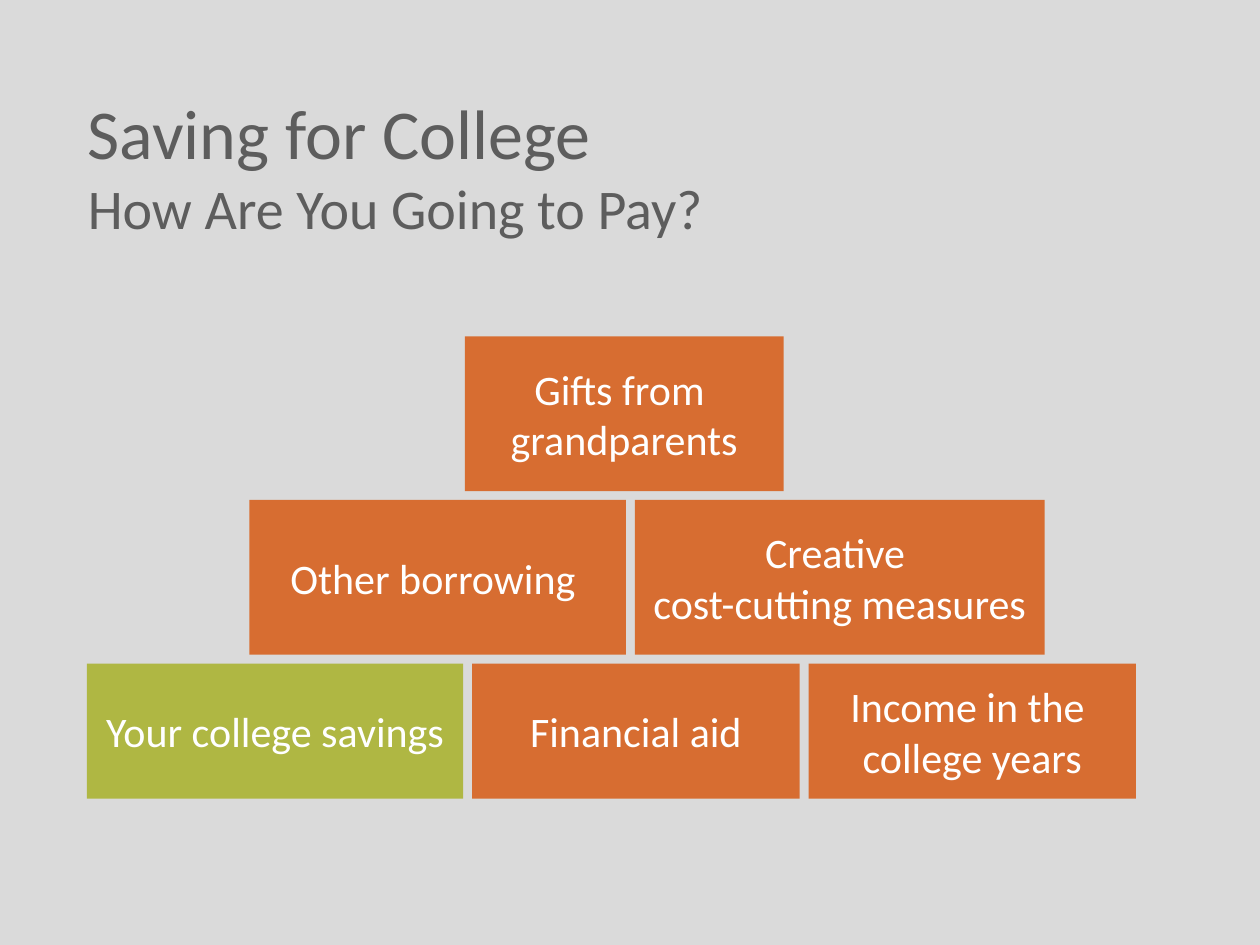
"""Build the college funding slide with its pyramid of funding blocks."""
from pptx import Presentation
from pptx import util as u
from pptx.dml.color import RGBColor
from pptx.enum import shapes, text

GREY = RGBColor(0xDA, 0xDA, 0xDA)
DARK = RGBColor(0x5D, 0x5D, 0x5D)
GREEN = RGBColor(0xAF, 0xB7, 0x43)
ORANGE = RGBColor(0xD7, 0x6D, 0x31)
WHITE = RGBColor(0xFF, 0xFF, 0xFF)

GAP = 0.18
TOP = 6.78
ROWS = [
    (9.37, 3.12, [("Gifts from \ngrandparents", 6.43, ORANGE)]),
    (5.03, 3.12, [("Other borrowing ", 7.59, ORANGE),
                  ("Creative \ncost-cutting measures", 8.26, ORANGE)]),
    (1.75, 2.72, [("Your college savings", 7.59, GREEN),
                  ("Financial aid", 6.6, ORANGE),
                  ("Income in the \vcollege years", 6.6, ORANGE)]),
]


def add_text(tf, content, sizes, color, font="Calibri",
             align=text.PP_ALIGN.LEFT):
    for i, line in enumerate(content.split("\n")):
        p = tf.add_paragraph() if i else tf.paragraphs[0]
        p.text = line
        p.alignment = align
        for r in p.runs:
            r.font.name = font
            r.font.size = u.Pt(sizes[min(i, len(sizes) - 1)])
            r.font.color.rgb = color


class Deck:
    def __init__(self, prs):
        self.s = prs.slides.add_slide(prs.slide_layouts[6])
        self.s.background.fill.solid()
        self.s.background.fill.fore_color.rgb = GREY

    def title(self, content, x, y, w, h):
        sp = self.s.shapes.add_textbox(u.Cm(x), u.Cm(y), u.Cm(w), u.Cm(h))
        tf = sp.text_frame
        tf.word_wrap = True
        tf.vertical_anchor = text.MSO_ANCHOR.BOTTOM
        tf.margin_bottom = 0
        add_text(tf, content, (40, 32), DARK)

    def block(self, content, x, y, w, h, fill):
        sp = self.s.shapes.add_shape(shapes.MSO_SHAPE.RECTANGLE,
                                     u.Cm(x), u.Cm(y), u.Cm(w), u.Cm(h))
        sp.shadow.inherit = False
        sp.fill.solid()
        sp.fill.fore_color.rgb = fill
        sp.line.fill.background()
        tf = sp.text_frame
        tf.word_wrap = False
        tf.vertical_anchor = text.MSO_ANCHOR.MIDDLE
        tf.margin_left = tf.margin_right = u.Cm(0.25)
        tf.margin_top = tf.margin_bottom = u.Cm(0.25)
        add_text(tf, content, (24,), WHITE, align=text.PP_ALIGN.CENTER)


def main():
    prs = Presentation()
    prs.slide_width, prs.slide_height = u.Cm(25.4), u.Cm(19.05)
    deck = Deck(prs)
    deck.title("Saving for College\nHow Are You Going to Pay?",
               1.52, 1.47, 20.29, 3.38)
    y = TOP
    for x, h, blocks in ROWS:
        for content, w, fill in blocks:
            deck.block(content, x, y, w, h, fill)
            x += w + GAP
        y += h + GAP
    prs.save("out.pptx")


if __name__ == "__main__":
    main()
